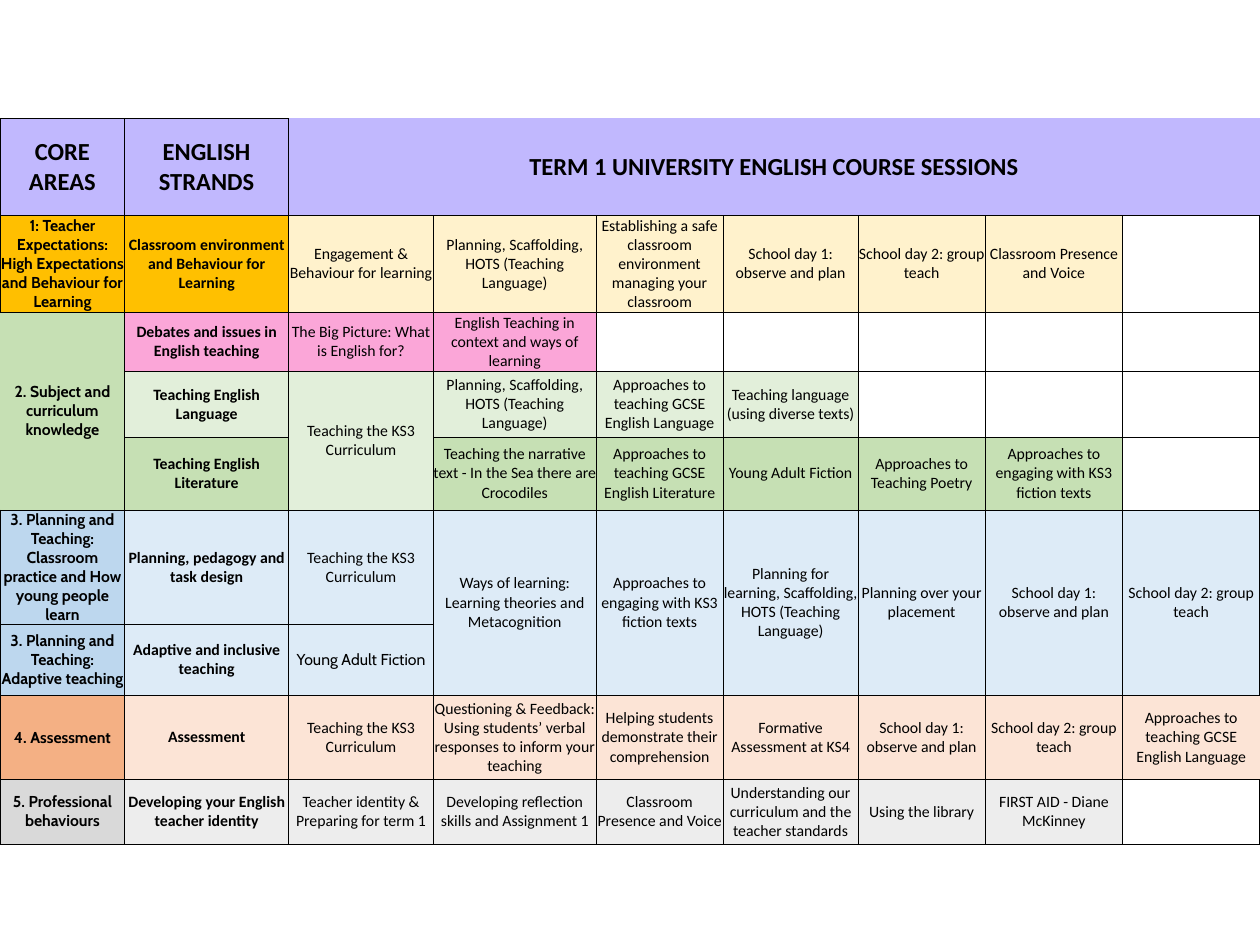
from lxml.etree import SubElement
from pptx import Presentation
from pptx.dml.color import RGBColor
from pptx.enum.text import MSO_ANCHOR, PP_ALIGN
from pptx.oxml.ns import qn
from pptx.util import Inches, Pt

HEADINGS = ("CORE AREAS", "ENGLISH STRANDS", "TERM 1 UNIVERSITY ENGLISH COURSE SESSIONS")
HEADING_FILL = "C1B8FE"
HEADING_HEIGHT = 0.77
TABLE_TOP = 0.94
COLUMN_WIDTHS = (0.99, 1.3, 1.15, 1.29, 1.01, 1.07, 1.01, 1.09, 1.09)

# Row height, fills of (core area, strand, sessions), then the texts.
# None continues the cell above; missing or empty sessions stay blank.
ROWS = [
    (0.77, ("FFBF00", "FFC000", "FFF2CC"), [
        "1: Teacher Expectations: High Expectations and Behaviour for Learning",
        "Classroom environment and Behaviour for Learning",
        "Engagement & Behaviour for learning",
        "Planning, Scaffolding, HOTS (Teaching Language)",
        "Establishing a safe classroom environment managing your classroom",
        "School day 1: observe and plan",
        "School day 2: group teach",
        "Classroom Presence and Voice"]),
    (0.47, ("C6E0B4", "FBA6D8", "FBA6D8"), [
        "2. Subject and curriculum knowledge",
        "Debates and issues in English teaching",
        "The Big Picture: What is English for?",
        "English Teaching in context and ways of learning"]),
    (0.52, ("C6E0B4", "E2EFDA", "E2EFDA"), [
        None,
        "Teaching English Language",
        "Teaching the KS3 Curriculum",
        "Planning, Scaffolding, HOTS (Teaching Language)",
        "Approaches to teaching GCSE English Language",
        "Teaching language (using diverse texts)"]),
    (0.58, ("C6E0B4", "C6E0B4", "C6E0B4"), [
        None,
        "Teaching English Literature",
        None,
        "Teaching the narrative text - In the Sea there are Crocodiles",
        "Approaches to teaching GCSE English Literature",
        "Young Adult Fiction",
        "Approaches to Teaching Poetry",
        "Approaches to engaging with KS3 fiction texts"]),
    (0.91, ("BDD7EE", "DDEBF7", "DDEBF7"), [
        "3. Planning and Teaching: Classroom practice and How young people learn",
        "Planning, pedagogy and task design",
        "Teaching the KS3 Curriculum",
        "Ways of learning: Learning theories and Metacognition",
        "Approaches to engaging with KS3 fiction texts",
        "Planning for learning, Scaffolding, HOTS (Teaching Language)",
        "Planning over your placement",
        "School day 1: observe and plan",
        "School day 2: group teach"]),
    (0.56, ("BDD7EE", "DDEBF7", "DDEBF7"), [
        "3. Planning and Teaching: Adaptive teaching",
        "Adaptive and inclusive teaching",
        "Young Adult Fiction"] + [None] * 6),
    (0.67, ("F4B084", "FCE4D6", "FCE4D6"), [
        "4. Assessment",
        "Assessment",
        "Teaching the KS3 Curriculum",
        "Questioning & Feedback: Using students’ verbal responses to inform your teaching",
        "Helping students demonstrate their comprehension",
        "Formative Assessment at KS4",
        "School day 1: observe and plan",
        "School day 2: group teach",
        "Approaches to teaching GCSE English Language"]),
    (0.51, ("D9D9D9", "EDEDED", "EDEDED"), [
        "5. Professional behaviours",
        "Developing your English teacher identity",
        "Teacher identity & Preparing for term 1",
        "Developing reflection skills and Assignment 1",
        "Classroom Presence and Voice",
        "Understanding our curriculum and the teacher standards",
        "Using the library",
        "FIRST AID - Diane McKinney"]),
]

# Cells (row, column) with open sides
OPEN_SIDES = {(0, column): "TR" for column in range(2, 9)}
OPEN_SIDES |= {(row, 0): "L" for row in (2, 3, 4)}
OPEN_SIDES[7, 8] = "R"
CABIN_SESSION = (6, 2)


def rgb(value):
    return RGBColor.from_string(value)


def draw_borders(cell, open_sides):
    properties = cell._tc.get_or_add_tcPr()
    for side in "LRTB":
        line = SubElement(properties, qn(f"a:ln{side}"), w=str(Pt(0.5)))
        if side in open_sides:
            SubElement(line, qn("a:noFill"))
        else:
            fill = SubElement(line, qn("a:solidFill"))
            SubElement(fill, qn("a:srgbClr"), val="000000")


def write(cell, text, fill, font_name, size, bold):
    cell.fill.solid()
    cell.fill.fore_color.rgb = rgb(fill)
    paragraph = cell.text_frame.paragraphs[0]
    paragraph.alignment = PP_ALIGN.CENTER
    run = paragraph.add_run()
    run.text = text
    run.font.name = font_name
    run.font.size = Pt(size)
    run.font.bold = bold
    run.font.color.rgb = rgb("000000")


def main():
    presentation = Presentation()
    presentation.slide_width, presentation.slide_height = Inches(10), Inches(7.5)
    slide = presentation.slides.add_slide(presentation.slide_layouts[6])

    heights = [HEADING_HEIGHT] + [height for height, _, _ in ROWS]
    table = slide.shapes.add_table(
        len(heights), len(COLUMN_WIDTHS), 0, Inches(TABLE_TOP),
        Inches(sum(COLUMN_WIDTHS)), Inches(sum(heights))).table
    table.first_row = table.horz_banding = False
    for column, width in zip(table.columns, COLUMN_WIDTHS):
        column.width = Inches(width)
    for row, height in zip(table.rows, heights):
        row.height = Inches(height)

    for r in range(len(heights)):
        for c in range(len(COLUMN_WIDTHS)):
            cell = table.cell(r, c)
            cell.margin_left = cell.margin_right = 0
            cell.margin_top = cell.margin_bottom = 0
            cell.vertical_anchor = MSO_ANCHOR.MIDDLE
            draw_borders(cell, OPEN_SIDES.get((r, c), ""))
            cell.fill.background()

    table.cell(0, 2).merge(table.cell(0, len(COLUMN_WIDTHS) - 1))
    for c, heading in enumerate(HEADINGS):
        write(table.cell(0, c), heading, HEADING_FILL, "Calibri", 14, True)

    for r, (_, fills, texts) in enumerate(ROWS, 1):
        for c, text in enumerate(texts):
            if text is None:
                continue
            last = r
            while last < len(ROWS) and c < len(ROWS[last][2]) and ROWS[last][2][c] is None:
                last += 1
            cell = table.cell(r, c)
            if last > r:
                cell.merge(table.cell(last, c))
            font_name = "Cabin" if c == 0 or (r, c) == CABIN_SESSION else "Calibri"
            write(cell, text, fills[min(c, 2)], font_name, 9, c < 2)

    presentation.save("out.pptx")


if __name__ == "__main__":
    main()
